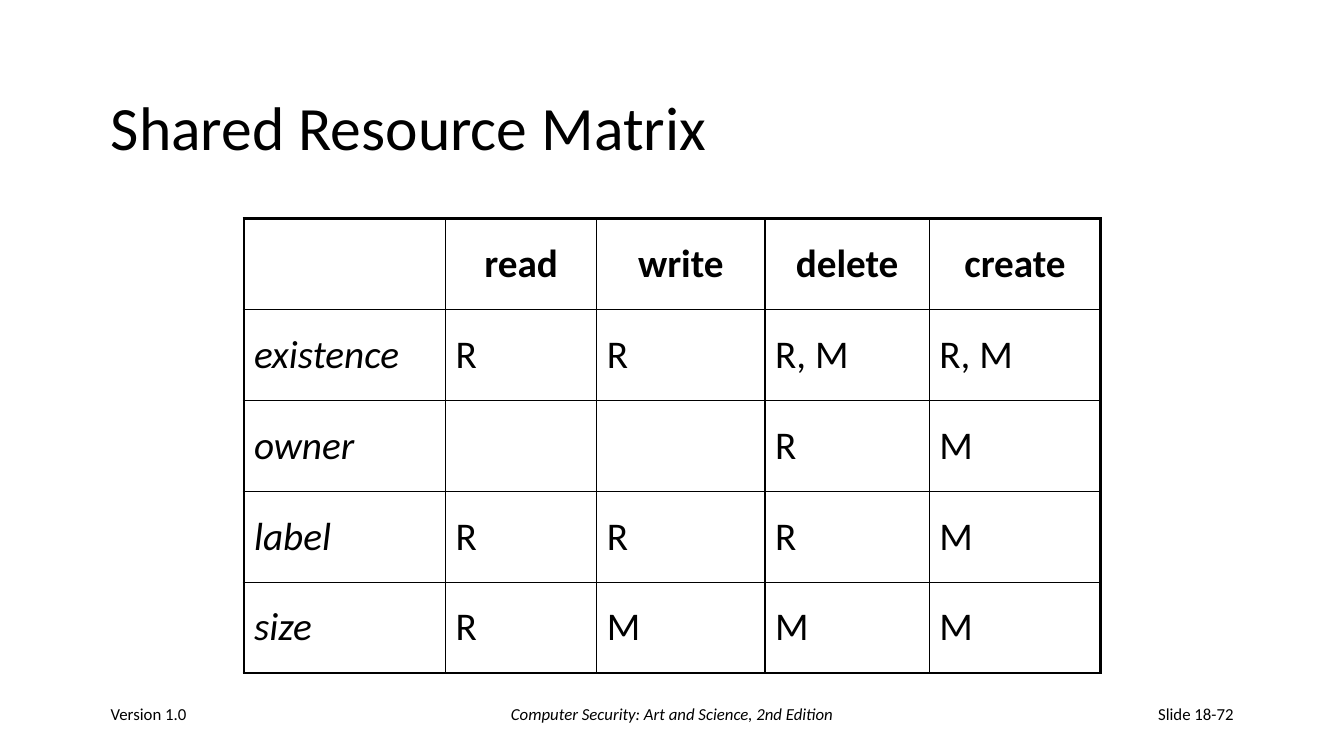
from lxml.etree import SubElement
from pptx import Presentation
from pptx.dml.color import RGBColor
from pptx.enum.text import MSO_ANCHOR, MSO_AUTO_SIZE, PP_ALIGN
from pptx.oxml.ns import qn
from pptx.util import Cm, Pt

BLACK = RGBColor(0, 0, 0)
WHITE = RGBColor(255, 255, 255)
THIN, THICK = Pt(1), Pt(2.25)


def style_text(frame, size, align, bold=False, italic=False):
    para = frame.paragraphs[0]
    para.alignment = align
    for span in para.runs:
        span.font.name = "Calibri"
        span.font.size = Pt(size)
        span.font.bold = bold
        span.font.italic = italic
        span.font.color.rgb = BLACK


def add_border(cell, side, width):
    line = SubElement(cell._tc.get_or_add_tcPr(), qn(f"a:ln{side}"), w=str(width))
    fill = SubElement(line, qn("a:solidFill"))
    SubElement(fill, qn("a:srgbClr"), val=str(BLACK))


deck = Presentation()
deck.slide_width, deck.slide_height = Cm(33.87), Cm(19.05)
page = deck.slides.add_slide(deck.slide_layouts[5])

title = page.shapes.title
title.left, title.top, title.width, title.height = Cm(2.54), Cm(1.7), Cm(28.78), Cm(3.18)
title.text_frame.text = "Shared Resource Matrix"
title.text_frame.vertical_anchor = MSO_ANCHOR.MIDDLE
title.text_frame.auto_size = MSO_AUTO_SIZE.NONE
title.text_frame.paragraphs[0].line_spacing = 0.9
style_text(title.text_frame, 44, PP_ALIGN.LEFT)

matrix = [
    ["", "read", "write", "delete", "create"],
    ["existence", "R", "R", "R, M", "R, M"],
    ["owner", "", "", "R", "M"],
    ["label", "R", "R", "R", "M"],
    ["size", "R", "M", "M", "M"],
]
column_widths = [5.08, 3.81, 4.24, 4.14, 4.32]
last = len(matrix) - 1

table = page.shapes.add_table(
    len(matrix), len(column_widths), Cm(6.15), Cm(5.51), Cm(21.59), Cm(11.45)
).table
table.first_row = False
table.horz_banding = False
for column, width in zip(table.columns, column_widths):
    column.width = Cm(width)

for r, labels in enumerate(matrix):
    table.rows[r].height = Cm(2.29)
    for c, label in enumerate(labels):
        cell = table.cell(r, c)
        cell.text_frame.text = label
        cell.vertical_anchor = MSO_ANCHOR.MIDDLE
        align = PP_ALIGN.CENTER if r == 0 else PP_ALIGN.LEFT
        style_text(cell.text_frame, 28, align, bold=r == 0, italic=c == 0)
        outer_sides = {"L": c == 0, "R": c == last, "T": r == 0, "B": r == last}
        for side, outer in outer_sides.items():
            add_border(cell, side, THICK if outer else THIN)
        cell.fill.solid()
        cell.fill.fore_color.rgb = WHITE

footers = [
    ("Version 1.0", 2.54, 7.06, PP_ALIGN.LEFT, False),
    ("Computer Security: Art and Science, 2nd Edition", 11.58, 10.72, PP_ALIGN.CENTER, True),
    ("Slide 18-72", 24.28, 7.06, PP_ALIGN.RIGHT, False),
]
for wording, left, width, align, italic in footers:
    box = page.shapes.add_textbox(Cm(left), Cm(17.35), Cm(width), Cm(1.27))
    box.text_frame.text = wording
    box.text_frame.word_wrap = True
    box.text_frame.vertical_anchor = MSO_ANCHOR.MIDDLE
    style_text(box.text_frame, 12, align, italic=italic)

deck.save("out.pptx")
